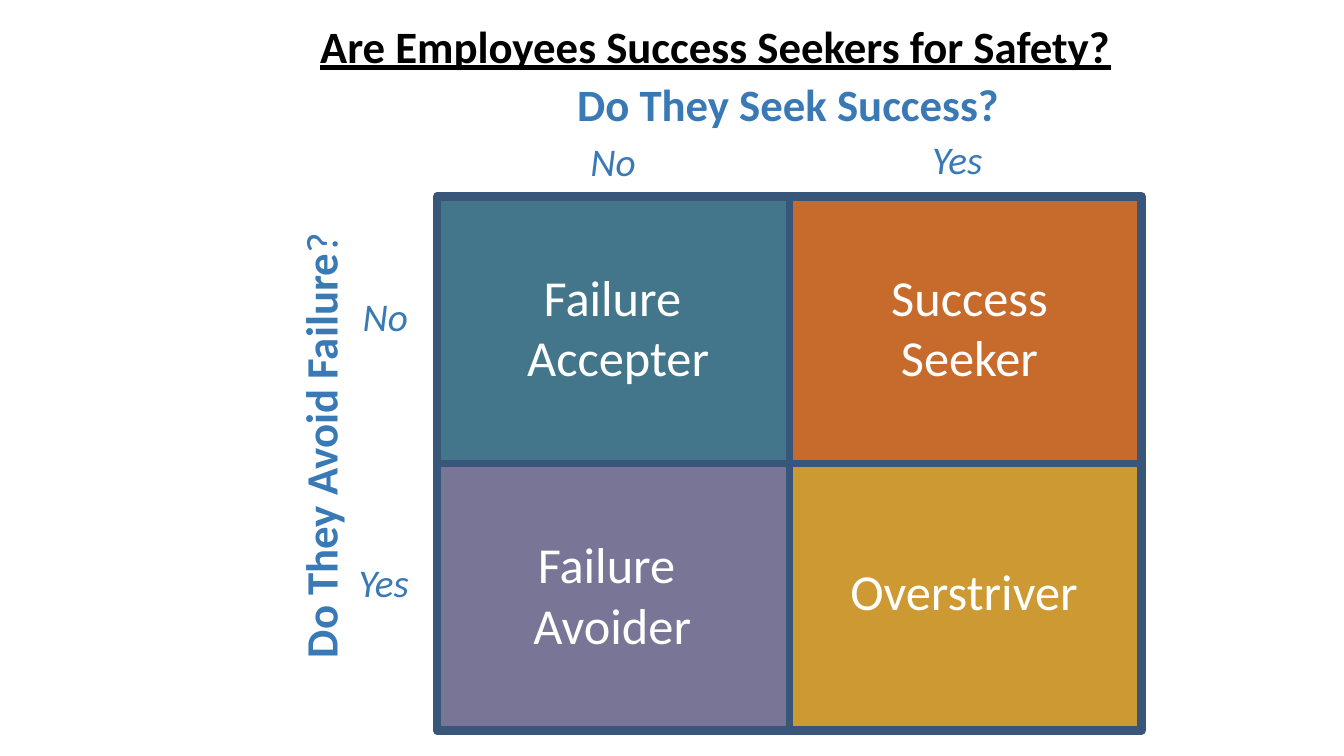
from dataclasses import dataclass

from lxml import etree
from pptx import Presentation
from pptx.dml.color import RGBColor
from pptx.enum import shapes, text
from pptx.oxml import ns
from pptx.util import Cm, Pt


@dataclass(frozen=True)
class Theme:
    font: str = "Calibri"
    black: str = "000000"
    white: str = "FFFFFF"
    axis: str = "397AB6"
    frame: str = "375679"
    accepter: str = "43768B"
    seeker: str = "C76B2D"
    avoider: str = "797596"
    overstriver: str = "CC9933"
    heading_size: int = 32
    quadrant_size: int = 36
    answer_size: int = 28


@dataclass(frozen=True)
class Box:
    """A rectangle in centimetres."""
    left: float
    top: float
    width: float
    height: float

    def inner(self, left, top, width, height):
        return Box(self.left + left, self.top + top, width, height)

    def lengths(self):
        return [Cm(v) for v in (self.left, self.top, self.width, self.height)]


THEME = Theme()
MATRIX = Box(11.02, 4.95, 17.75, 13.46)
CELL_WIDTH, CELL_HEIGHT = 8.79, 6.76
ROW_PITCH = 6.66
# Each row: (wording, fill, label box within its quadrant)
QUADRANTS = [
    [(["Failure ", "Accepter"], THEME.accepter, (0.86, 1.55, 7.24, 3.51)),
     (["Success", "Seeker"], THEME.seeker, (1.14, 1.55, 6.81, 3.12))],
    [(["Failure ", "Avoider"], THEME.avoider, (1.14, 1.63, 6.38, 3.51)),
     (["Overstriver"], THEME.overstriver, (0.15, 2.31, 8.51, 1.55))],
]


def rgb(color):
    return RGBColor.from_string(color)


def style(paragraph, size, color, bold=False, italic=False):
    font = paragraph.font
    font.name, font.size = THEME.font, Pt(size)
    font.bold, font.italic = bold, italic
    font.color.rgb = rgb(color)


def add_label(slide, box, lines, size, color, wrap=True, middle=False,
              bold=False, italic=False):
    label = slide.shapes.add_textbox(*box.lengths())
    frame = label.text_frame
    frame.word_wrap = wrap
    frame.vertical_anchor = (text.MSO_ANCHOR.MIDDLE if middle
                             else text.MSO_ANCHOR.TOP)
    frame.text = "\n".join(lines)
    for paragraph in frame.paragraphs:
        paragraph.alignment = text.PP_ALIGN.CENTER if wrap else text.PP_ALIGN.LEFT
        style(paragraph, size, color, bold, italic)
    return label


def add_panel(slide, box, fill, line_width):
    panel = slide.shapes.add_shape(shapes.MSO_SHAPE.RECTANGLE, *box.lengths())
    panel.shadow.inherit = False
    if fill:
        panel.fill.solid()
        panel.fill.fore_color.rgb = rgb(fill)
    else:
        panel.fill.background()
    panel.line.color.rgb = rgb(THEME.frame)
    panel.line.width = Pt(line_width)
    return panel


def add_divider(slide, border, start_side, end_side):
    """Join the middles of two opposite sides of the border."""
    divider = slide.shapes.add_connector(shapes.MSO_CONNECTOR.STRAIGHT, 0, 0, 0, 0)
    divider.begin_connect(border, start_side)
    divider.end_connect(border, end_side)
    divider.line.color.rgb = rgb(THEME.frame)
    divider.line.width = Pt(4.5)
    etree.SubElement(divider.element.spPr, ns.qn("a:effectLst"))


def add_title(slide, box):
    title = slide.shapes.title
    title.left, title.top, title.width, title.height = box.lengths()
    frame = title.text_frame
    frame.text = "Are Employees Success Seekers for Safety?"
    frame.auto_size = text.MSO_AUTO_SIZE.NONE
    frame.word_wrap = True
    frame.vertical_anchor = text.MSO_ANCHOR.TOP
    frame.margin_left = frame.margin_right = Cm(0.33)
    frame.margin_top = frame.margin_bottom = Cm(0.18)
    paragraph = frame.paragraphs[0]
    paragraph.alignment = text.PP_ALIGN.CENTER
    style(paragraph, THEME.heading_size, THEME.black, bold=True)
    paragraph.font.underline = True


def add_matrix(slide, box):
    labels = []
    for row, quadrants in enumerate(QUADRANTS):
        for column, (lines, fill, place) in enumerate(quadrants):
            cell = box.inner(0.08 + column * CELL_WIDTH, 0.08 + row * ROW_PITCH,
                             CELL_WIDTH, CELL_HEIGHT)
            add_panel(slide, cell, fill, 0.75)
            labels.append((cell.inner(*place), lines))
    border = add_panel(slide, box, None, 6)
    add_divider(slide, border, 1, 3)
    add_divider(slide, border, 0, 2)
    for place, lines in labels:
        add_label(slide, place, lines, THEME.quadrant_size, THEME.white)


def add_success_axis(slide, box):
    """Heading and answers above the matrix."""
    add_label(slide, box.inner(1.76, -3.15, 14.17, 1.63), ["Do They Seek Success?"],
              THEME.heading_size, THEME.axis, middle=True, bold=True)
    for answer, left, top, width in (("No", 3.61, -1.62, 1.88),
                                     ("Yes", 12.22, -1.67, 2.11)):
        add_label(slide, box.inner(left, top, width, 1.45), [answer],
                  THEME.answer_size, THEME.axis, wrap=False, middle=True, italic=True)


def add_failure_axis(slide, box):
    """Turned heading and answers left of the matrix."""
    heading = add_label(slide, box.inner(-9.5, 5.46, 13.08, 1.63),
                        ["Do They Avoid Failure"], THEME.heading_size, THEME.axis,
                        middle=True, bold=True)
    heading.rotation = 270
    question_mark = heading.text_frame.paragraphs[0].add_run()
    question_mark.text = "?"
    question_mark.font.bold = False
    for answer, left, top, width in (("No", -2.13, 2.29, 1.68),
                                     ("Yes", -2.23, 8.99, 1.91)):
        add_label(slide, box.inner(left, top, width, 1.45), [answer],
                  THEME.answer_size, THEME.axis, wrap=False, italic=True)


def main():
    deck = Presentation()
    deck.slide_width, deck.slide_height = Cm(33.87), Cm(19.05)
    slide = deck.slides.add_slide(deck.slide_layouts.get_by_name("Title Only"))
    add_title(slide, Box(5.33, 0.28, 25.4, 1.9))
    add_matrix(slide, MATRIX)
    add_success_axis(slide, MATRIX)
    add_failure_axis(slide, MATRIX)
    deck.save("out.pptx")


if __name__ == "__main__":
    main()
